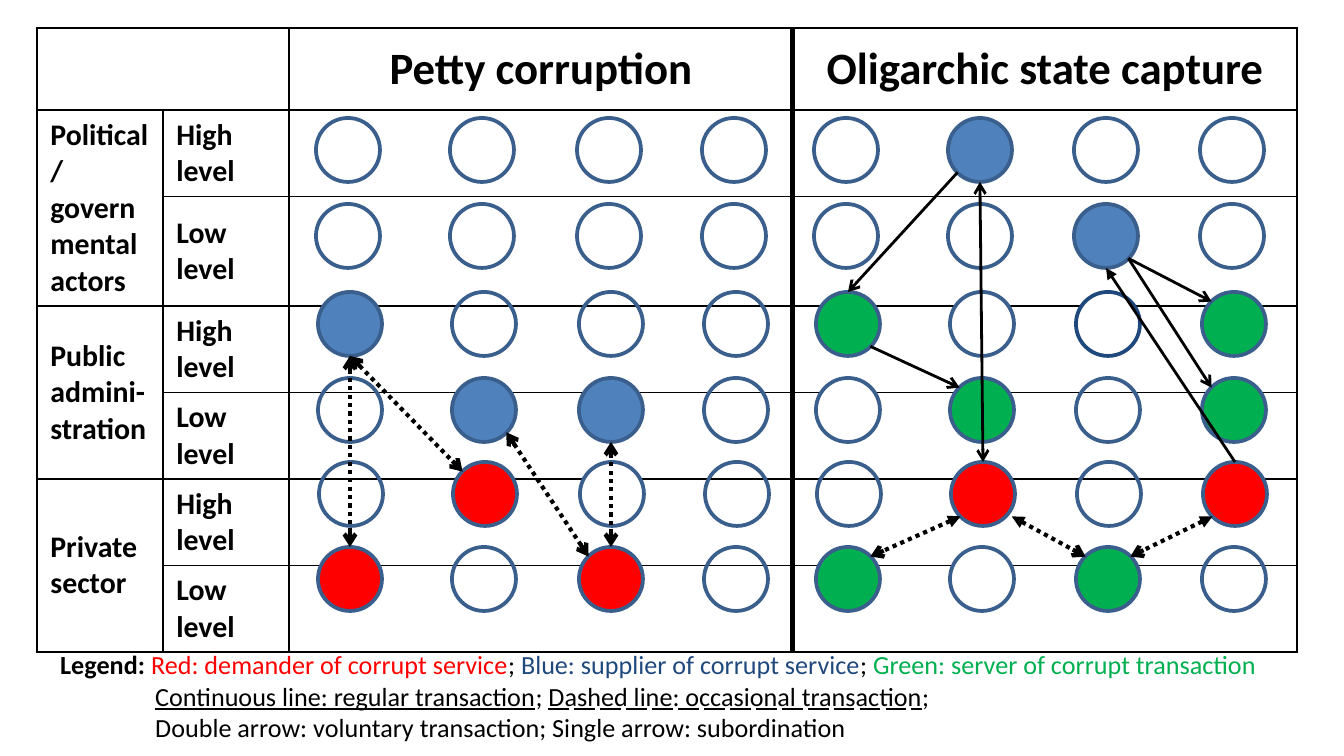
from dataclasses import dataclass

import pptx
import pptx.dml.color
import pptx.enum.dml
import pptx.enum.shapes
import pptx.enum.text
import pptx.oxml.ns
import pptx.util
from lxml import etree

PX = 914400 / 134.4  # EMU in one px


@dataclass(frozen=True)
class Theme:
    font: str = "Calibri"
    black: str = "000000"
    white: str = "FFFFFF"
    red: str = "FF0000"
    blue: str = "4F81BD"
    green: str = "00B050"
    navy: str = "1F497D"
    outline: str = "3A5F8C"
    header_size: int = 24
    label_size: int = 16
    legend_size: int = 14


T = Theme()

HEADERS = [(2, "Petty corruption"), (6, "Oligarchic state capture")]
GROUPS = ["Political/governmental actors", "Public admini-stration", "Private sector"]
LEVELS = ["High level", "Low level"]

# One letter per actor: R red, B blue, G green, W white, N white with navy outline, . no fill
ACTORS = [
    ".....B..",
    ".....WB.",
    "B...GWNG",
    ".BB.WG.G",
    ".RW..R.R",
    "R.R.GWG.",
]
FILLS = {"R": T.red, "B": T.blue, "G": T.green, "W": T.white, "N": T.white}

# (row, column), side, (row, column), side, dashed, start head, end head
LINKS = [
    ((2, 0), "bottom", (5, 0), "top", True, "arrow", "arrow"),
    ((2, 0), "bottom", (4, 1), "top left", True, "arrow", "arrow"),
    ((5, 2), "top left", (3, 1), "bottom right", True, "arrow", "arrow"),
    ((5, 2), "top", (3, 2), "bottom", True, "arrow", "arrow"),
    ((4, 5), "bottom left", (5, 4), "top right", True, "triangle", "arrow"),
    ((4, 5), "outer right", (5, 6), "top left", True, "triangle", "arrow"),
    ((4, 7), "bottom left", (5, 6), "top right", True, "triangle", "arrow"),
    ((4, 5), "top", (0, 5), "bottom", False, "arrow", "arrow"),
    ((1, 6), "bottom", (4, 7), "top", False, "triangle", None),
    ((0, 5), "bottom left", (2, 4), "top", False, None, "arrow"),
    ((1, 6), "bottom right", (2, 7), "top left", False, None, "arrow"),
    ((2, 4), "bottom right", (3, 5), "top left", False, None, "arrow"),
    ((1, 6), "bottom right", (3, 7), "top left", False, None, "arrow"),
]

# Runs: text, colour, bold, underline
DASHED = pptx.enum.text.MSO_UNDERLINE.DASH_LONG_HEAVY_LINE
LEGEND = [
    [("Legend: ", T.black, True, False),
     ("Red: demander of corrupt service", T.red, False, False),
     ("; ", T.black, False, False),
     ("Blue: supplier of corrupt service", T.navy, False, False),
     ("; ", T.black, False, False),
     ("Green: server of corrupt transaction", T.green, False, False)],
    [("Continuous line: regular transaction", T.black, False, True),
     ("; ", T.black, False, False),
     ("Dashed line: occasional transaction", T.black, False, DASHED),
     (";", T.black, False, False)],
    [("Double arrow: voluntary transaction; Single arrow: subordination",
      T.black, False, False)],
]
LEGEND_INDENT = 95

TABLE_LEFT, TABLE_TOP, COLUMN, HEADER_ROW, BODY_ROW = 37, 28, 126, 82, 71
CIRCLE = 64
CIRCLE_X = [316, 450, 577, 702, 814, 948, 1074, 1200]
CIRCLE_Y = [118, 204, 292, 378, 462, 547]
ROW_SHIFT = [0, 0, 2, 2, 3, 2]
SIDES = {
    "top": (0.5, 0), "bottom": (0.5, 1),
    "top left": (0.15, 0.15), "top right": (0.85, 0.15),
    "bottom left": (0.15, 0.85), "bottom right": (0.85, 0.85),
    "outer right": (0.95, 0.85),
}


def px(n):
    return pptx.util.Emu(round(n * PX))


def rgb(value):
    return pptx.dml.color.RGBColor.from_string(value)


def style(r, size, color=T.black, bold=True, underline=False):
    f = r.font
    f.name, f.size, f.bold = T.font, pptx.util.Pt(size), bold
    f.color.rgb = rgb(color)
    if underline:
        f.underline = underline


def row_line(y, c):
    """Width of the horizontal rule above table row y at column c."""
    return 1.5 if y in (3, 5) or (y in (1, 7) and c >= 2) else 1


def column_line(x, r):
    """Width of the vertical rule left of column x in row r, None if absent."""
    outer = 1.5 if r else 1
    return {0: 1, 1: 1, 2: outer, 6: 3, 10: outer}.get(x)


def set_border(cell, side, width):
    ln = etree.SubElement(cell._tc.get_or_add_tcPr(), pptx.oxml.ns.qn(f"a:{side}"))
    if width is None:
        etree.SubElement(ln, pptx.oxml.ns.qn("a:noFill"))
        return
    ln.set("w", str(pptx.util.Pt(width)))
    fill = etree.SubElement(ln, pptx.oxml.ns.qn("a:solidFill"))
    etree.SubElement(fill, pptx.oxml.ns.qn("a:srgbClr"), val=T.black)


def set_label(cell, text, size, align=pptx.enum.text.PP_ALIGN.LEFT):
    p = cell.text_frame.paragraphs[0]
    p.text, p.alignment = text, align
    style(p.runs[0], size)
    cell.vertical_anchor = pptx.enum.text.MSO_ANCHOR.MIDDLE


def add_grid(s):
    table = s.shapes.add_table(7, 10, px(TABLE_LEFT), px(TABLE_TOP), px(10 * COLUMN),
                               px(HEADER_ROW + 6 * BODY_ROW)).table
    table.first_row = table.horz_banding = False
    for column in table.columns:
        column.width = px(COLUMN)
    for i, row in enumerate(table.rows):
        row.height = px(BODY_ROW if i else HEADER_ROW)
    table.cell(0, 0).merge(table.cell(0, 1))
    for c, text in HEADERS:
        table.cell(0, c).merge(table.cell(0, c + 3))
        set_label(table.cell(0, c), text, T.header_size, pptx.enum.text.PP_ALIGN.CENTER)
    for i, group in enumerate(GROUPS):
        top = 1 + 2 * i
        table.cell(top, 0).merge(table.cell(top + 1, 0))
        set_label(table.cell(top, 0), group, T.label_size)
        for j, level in enumerate(LEVELS):
            set_label(table.cell(top + j, 1), level, T.label_size)
    for r in range(7):
        for c in range(10):
            cell = table.cell(r, c)
            if not cell.is_spanned:
                right = c + (cell.span_width if cell.is_merge_origin else 1)
                bottom = r + (cell.span_height if cell.is_merge_origin else 1)
                set_border(cell, "lnL", column_line(c, r))
                set_border(cell, "lnR", column_line(right, r))
                set_border(cell, "lnT", row_line(r, c))
                set_border(cell, "lnB", row_line(bottom, c))
            cell.fill.background()


def add_actor(s, row, col, kind):
    sp = s.shapes.add_shape(pptx.enum.shapes.MSO_SHAPE.OVAL,
                            px(CIRCLE_X[col] + ROW_SHIFT[row]), px(CIRCLE_Y[row]),
                            px(CIRCLE), px(CIRCLE))
    sp.shadow.inherit = False
    if kind in FILLS:
        sp.fill.solid()
        sp.fill.fore_color.rgb = rgb(FILLS[kind])
    else:
        sp.fill.background()
    sp.line.color.rgb = rgb(T.navy if kind == "N" else T.outline)
    sp.line.width = pptx.util.Pt(2)


def anchor(actor, side):
    row, col = actor
    dx, dy = SIDES[side]
    return (px(CIRCLE_X[col] + ROW_SHIFT[row] + dx * CIRCLE),
            px(CIRCLE_Y[row] + dy * CIRCLE))


def add_link(s, start, start_side, end, end_side, dashed, head, tail):
    link = s.shapes.add_connector(pptx.enum.shapes.MSO_CONNECTOR.STRAIGHT,
                                  *anchor(start, start_side), *anchor(end, end_side))
    link.line.color.rgb = rgb(T.black)
    link.line.width = pptx.util.Pt(2.25 if dashed else 1.5)
    if dashed:
        link.line.dash_style = pptx.enum.dml.MSO_LINE.ROUND_DOT
    ln = link.line._get_or_add_ln()
    for tag, kind in (("a:headEnd", head), ("a:tailEnd", tail)):
        if kind:
            etree.SubElement(ln, pptx.oxml.ns.qn(tag), type=kind)
    etree.SubElement(link._element.spPr, pptx.oxml.ns.qn("a:effectLst"))


def add_legend(s):
    tf = s.shapes.add_textbox(px(47), px(642), px(1238), px(109)).text_frame
    tf.word_wrap = True
    tf.auto_size = pptx.enum.text.MSO_AUTO_SIZE.SHAPE_TO_FIT_TEXT
    for i, runs in enumerate(LEGEND):
        p = tf.add_paragraph() if i else tf.paragraphs[0]
        if i:
            p._p.get_or_add_pPr().set("marL", str(px(LEGEND_INDENT)))
        for text, color, bold, underline in runs:
            r = p.add_run()
            r.text = text
            style(r, T.legend_size, color, bold, underline)


prs = pptx.Presentation()
prs.slide_width, prs.slide_height = px(1344), px(756)
s = prs.slides.add_slide(prs.slide_layouts[6])
add_grid(s)
for row, kinds in enumerate(ACTORS):
    for col, kind in enumerate(kinds):
        add_actor(s, row, col, kind)
for link in LINKS:
    add_link(s, *link)
add_legend(s)
prs.save("out.pptx")
